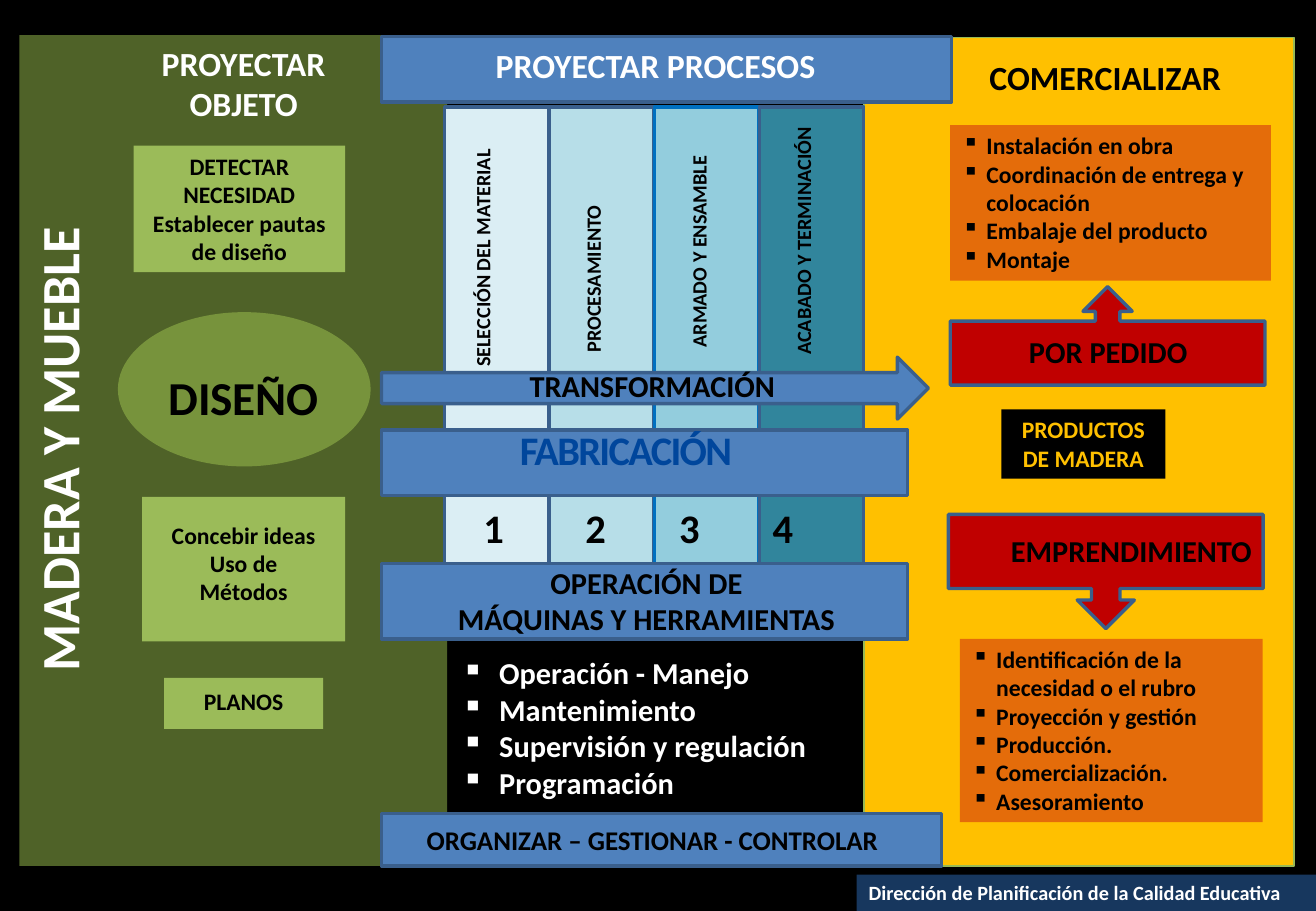
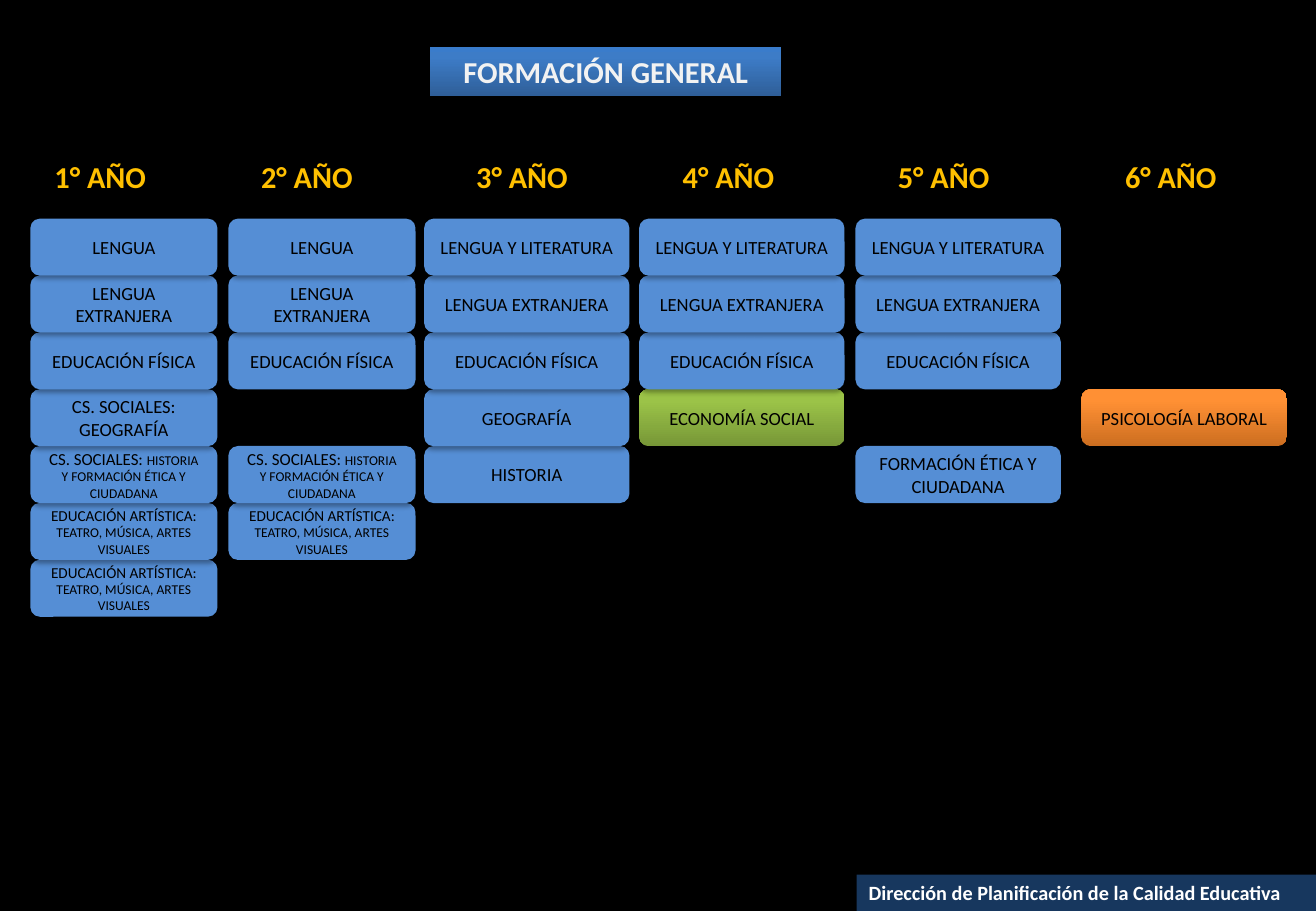
from dataclasses import dataclass, replace
from typing import NamedTuple, Optional

from lxml.etree import SubElement
from pptx import Presentation
from pptx.dml.color import RGBColor
from pptx.enum.shapes import MSO_SHAPE
from pptx.enum.text import MSO_ANCHOR, PP_ALIGN
from pptx.oxml import parse_xml
from pptx.oxml.ns import nsdecls, qn
from pptx.util import Inches, Pt

FONT = "Calibri"
COLORS = {
    "black": "000000", "white": "FFFFFF", "pale": "F2F2F2", "gold": "FFC000",
    "forest": "4F6228", "olive": "77933C", "leaf": "9BBB59", "leaf line": "98B955",
    "ice": "DBEEF4", "sky": "B7DEE8", "aqua": "93CDDD", "teal": "31859C",
    "blue": "4F81BD", "edge": "3A5F8C", "bright edge": "0070C0", "ink": "00469C",
    "red": "C00000", "orange": "E46C0A", "navy": "17375E", "subject": "558ED5",
}
# Bottom to top: colours at 0, 80 and 100 percent
GRADIENTS = {
    "green fade": ("779737", "9BC348", "9DC746"),
    "orange fade": ("CC6E20", "FF9034", "FF9136"),
    "blue fade": ("2F5F99", "3D7CC7", "3A7CCB"),
}
LEFT, CENTER, RIGHT = PP_ALIGN.LEFT, PP_ALIGN.CENTER, PP_ALIGN.RIGHT
TOP, MIDDLE = MSO_ANCHOR.TOP, MSO_ANCHOR.MIDDLE


class Span(NamedTuple):
    text: str
    size: float


@dataclass(frozen=True)
class Box:
    """A shape or, without a geometry, a text box. Lengths are inches."""
    left: float
    top: float
    width: float
    height: float
    paragraphs: tuple = ()  # each one a string or a tuple of Span
    geometry: Optional[MSO_SHAPE] = None
    fill: str = ""
    line: str = ""
    line_width: float = 2
    rotation: float = 0
    shadow: bool = False
    size: float = 14
    color: str = "black"
    bold: bool = True
    align: PP_ALIGN = LEFT
    anchor: MSO_ANCHOR = TOP
    vertical: bool = False
    hang: float = 0  # bullet indent
    tabs: tuple = ()
    spacing: int = 0  # hundredths of a point


class Stage(NamedTuple):
    fill: str
    line: str
    label: str
    label_left: float
    label_top: float
    label_height: float


class Year(NamedTuple):
    heading_left: float
    left: float
    width: float
    subjects: tuple  # one per row, None for an empty row


def rgb(name: str) -> RGBColor:
    return RGBColor.from_string(COLORS[name])


def paint(shape, box: Box) -> None:
    properties = shape._element.spPr
    if box.fill in GRADIENTS:
        stops = "".join(
            f'<a:gs pos="{position}"><a:srgbClr val="{color}"/></a:gs>'
            for position, color in zip((0, 80000, 100000), GRADIENTS[box.fill]))
        properties.find(qn("a:prstGeom")).addnext(parse_xml(
            f'<a:gradFill {nsdecls("a")} rotWithShape="1"><a:gsLst>{stops}</a:gsLst>'
            '<a:lin ang="16200000" scaled="0"/></a:gradFill>'))
    else:
        shape.fill.solid()
        shape.fill.fore_color.rgb = rgb(box.fill)
    if box.line:
        shape.line.color.rgb = rgb(box.line)
        shape.line.width = Pt(box.line_width)
    else:
        shape.line.fill.background()
    shape.shadow.inherit = False
    if box.shadow:
        properties.find(qn("a:effectLst")).append(parse_xml(
            f'<a:outerShdw {nsdecls("a")} blurRad="39370" dist="22860" dir="5400000" '
            'rotWithShape="0"><a:srgbClr val="000000"><a:alpha val="35000"/>'
            '</a:srgbClr></a:outerShdw>'))


def write(frame, box: Box) -> None:
    frame.word_wrap = True
    frame.vertical_anchor = box.anchor
    if box.vertical:
        frame._txBody.bodyPr.set("vert", "vert270")
    for index, content in enumerate(box.paragraphs):
        para = frame.add_paragraph() if index else frame.paragraphs[0]
        para.alignment = box.align
        properties = para._p.get_or_add_pPr()
        if box.hang:
            properties.set("marL", str(Inches(box.hang)))
            properties.set("indent", str(-Inches(box.hang)))
            SubElement(properties, qn("a:buChar")).set("char", "▪")
        if box.tabs:
            stops = SubElement(properties, qn("a:tabLst"))
            for position in box.tabs:
                stop = SubElement(stops, qn("a:tab"))
                stop.set("pos", str(Inches(position)))
                stop.set("algn", "l")
        para.font.name = FONT
        para.font.size = Pt(box.size)
        para.font.bold = box.bold
        para.font.color.rgb = rgb(box.color)
        if isinstance(content, str):
            run = para.add_run()
            run.text = content
            if box.spacing:
                run._r.get_or_add_rPr().set("spc", str(box.spacing))
            continue
        for span in content:
            run = para.add_run()
            run.text = span.text
            run.font.size = Pt(span.size)


def draw(page, *boxes: Box) -> None:
    for box in boxes:
        frame = [Inches(n) for n in (box.left, box.top, box.width, box.height)]
        if box.geometry is None:
            shape = page.shapes.add_textbox(*frame)
        else:
            shape = page.shapes.add_shape(box.geometry, *frame)
            shape.rotation = box.rotation
            paint(shape, box)
        if box.paragraphs:
            write(shape.text_frame, box)


def panel(left: float, top: float, width: float, height: float, fill: str,
          *paragraphs, **options) -> Box:
    options = {"geometry": MSO_SHAPE.RECTANGLE, **options}
    return Box(left, top, width, height, paragraphs, fill=fill, **options)


def bar(top: float, width: float, height: float, **options) -> Box:
    return panel(3.14, top, width, height, "blue", line="edge", **options)


def label(left: float, top: float, width: float, height: float,
          *paragraphs, **options) -> Box:
    options = {"align": CENTER, "anchor": MIDDLE, **options}
    return Box(left, top, width, height, paragraphs, **options)


def add_page(deck):
    page = deck.slides.add_slide(deck.slide_layouts[6])
    page.background.fill.solid()
    page.background.fill.fore_color.rgb = rgb("black")
    return page


def add_footer(page) -> None:
    draw(page, panel(7.05, 7.2, 3.78, 0.3, "navy",
                     "Dirección de Planificación de la Calidad Educativa",
                     size=12, color="white"))


STAGES = (
    Stage("ice", "edge", "SELECCIÓN DEL MATERIAL", 3.82, 0.99, 2.13),
    Stage("sky", "edge", "PROCESAMIENTO", 4.73, 1.55, 1.45),
    Stage("aqua", "bright edge", "ARMADO Y ENSAMBLE", 5.6, 1.14, 1.82),
    Stage("teal", "edge", "ACABADO Y TERMINACIÓN", 6.46, 0.89, 2.13),
)


def build_process_page(deck) -> None:
    page = add_page(deck)
    # Side panels
    draw(page,
         panel(0.16, 0.29, 3.52, 6.84, "forest"),
         panel(7.11, 0.31, 3.54, 6.82, "gold", line="leaf line", line_width=0.75,
               shadow=True))
    # Stage columns
    for index, stage in enumerate(STAGES):
        draw(page, panel(3.66 + 0.863 * index, 0.88, 0.86, 3.76, stage.fill,
                         line=stage.line))
    # Central bars and their captions
    draw(page,
         bar(3.54, 4.33, 0.54),
         label(4.18, 3.45, 2.56, 0.63, "FABRICACIÓN", size=24, color="ink",
               align=LEFT, anchor=TOP, spacing=-100),
         bar(2.94, 4.5, 0.51, geometry=MSO_SHAPE.RIGHT_ARROW),
         label(4.26, 2.97, 2.43, 0.4, "TRANSFORMACIÓN", size=18, align=LEFT, anchor=TOP))
    for stage in STAGES:
        draw(page, label(stage.label_left, stage.label_top, 0.4, stage.label_height,
                         stage.label, size=12, align=LEFT, anchor=TOP, vertical=True))
    draw(page,
         label(3.66, 4.09, 3.46, 0.5, "\t1\t2\t3\t4", size=24, align=LEFT, anchor=TOP,
               tabs=(0.22, 1.06, 1.83, 2.6)),
         bar(0.3, 4.69, 0.54),
         label(2.94, 0.22, 4.91, 0.63, "PROYECTAR PROCESOS", size=20, color="white"),
         bar(4.64, 4.33, 0.62),
         label(2.89, 4.63, 4.86, 0.63, "OPERACIÓN DE", "MÁQUINAS Y HERRAMIENTAS", size=18),
         label(3.7, 5.34, 3.17, 1.31, "Operación - Manejo", "Mantenimiento",
               "Supervisión y regulación", "Programación",
               size=18, color="white", align=LEFT, anchor=TOP, hang=0.31),
         bar(6.7, 4.61, 0.43),
         label(2.94, 6.6, 4.86, 0.63, "ORGANIZAR – GESTIONAR - CONTROLAR", size=16))
    # Design side
    draw(page,
         label(0.31, 0.37, 3.39, 0.63, "PROYECTAR", "OBJETO", size=20, color="white"),
         panel(1.1, 1.2, 1.74, 1.04, "leaf", "DETECTAR", "NECESIDAD",
               "Establecer pautas", "de diseño", align=CENTER),
         panel(0.97, 2.57, 2.08, 1.27, "olive", geometry=MSO_SHAPE.OVAL),
         label(1.09, 2.98, 1.83, 0.57, "DISEÑO", size=28, anchor=TOP),
         panel(1.17, 4.09, 1.67, 1.19, "leaf"),
         label(1.3, 4.09, 1.41, 1.09, "Concebir ideas", "Uso de Métodos"),
         panel(1.35, 5.58, 1.31, 0.42, "leaf"),
         label(1.3, 5.55, 1.41, 0.44, "PLANOS"),
         label(0.16, 0.29, 0.74, 6.82, "MADERA Y MUEBLE", size=32, color="white",
               anchor=TOP, vertical=True))
    # Sales side
    callout = panel(8.71, 1.47, 0.81, 2.59, "red", line="edge", rotation=270,
                    geometry=MSO_SHAPE.RIGHT_ARROW_CALLOUT)
    draw(page,
         label(7.82, 0.4, 2.55, 0.47, "COMERCIALIZAR", size=20),
         panel(8.24, 3.37, 1.35, 0.57, "black", "PRODUCTOS", "DE MADERA",
               color="gold", align=CENTER),
         callout,
         label(7.82, 2.75, 2.6, 0.29, "POR PEDIDO", size=18),
         replace(callout, left=8.63, top=3.41, width=0.94, rotation=90),
         label(7.8, 4.22, 2.6, 0.63, "EMPRENDIMIENTO", size=18, align=RIGHT),
         panel(7.82, 1.03, 2.64, 1.28, "orange", "Instalación en obra",
               "Coordinación de entrega y colocación", "Embalaje del producto",
               "Montaje", hang=0.2),
         panel(7.9, 5.26, 2.49, 1.51, "orange",
               "Identificación de la necesidad o el rubro", "Proyección y gestión",
               "Producción.", "Comercialización.", "Asesoramiento", hang=0.2))
    add_footer(page)


SOCIAL = (Span("CS. SOCIALES: ", 10), Span("HISTORIA Y FORMACIÓN ÉTICA Y CIUDADANA", 8))
ARTS = (Span("EDUCACIÓN ARTÍSTICA: ", 9), Span("TEATRO, MÚSICA, ARTES VISUALES", 8))
LOWER = ("LENGUA", "LENGUA EXTRANJERA", "EDUCACIÓN FÍSICA")
UPPER = ("LENGUA Y LITERATURA",) + LOWER[1:]
YEARS = (
    Year(0.35, 0.25, 1.54, LOWER + ("CS. SOCIALES: GEOGRAFÍA", SOCIAL, ARTS, ARTS)),
    Year(2.05, 1.88, 1.54, LOWER + (None, SOCIAL, ARTS)),
    Year(3.82, 3.49, 1.69, UPPER + ("GEOGRAFÍA", "HISTORIA")),
    Year(5.52, 5.26, 1.69, UPPER + ("ECONOMÍA SOCIAL",)),
    Year(7.29, 7.04, 1.69, UPPER + (None, "FORMACIÓN ÉTICA Y CIUDADANA")),
    Year(9.16, 8.9, 1.69, (None, None, None, "PSICOLOGÍA LABORAL")),
)
SPECIAL_FILLS = {"ECONOMÍA SOCIAL": "green fade", "PSICOLOGÍA LABORAL": "orange fade"}


def build_subjects_page(deck) -> None:
    page = add_page(deck)
    draw(page, panel(3.54, 0.39, 2.89, 0.4, "blue fade", "FORMACIÓN GENERAL", size=18,
                     color="pale", align=CENTER, shadow=True))
    # Year columns, lowest row first so each shadow falls on the row below
    for number, year in enumerate(YEARS, start=1):
        draw(page, label(year.heading_left, 1.25, 1.18, 0.4, f"{number}° AÑO",
                         size=18, color="gold", align=LEFT, anchor=TOP))
        for row, subject in reversed(list(enumerate(year.subjects))):
            if subject:
                draw(page, panel(year.left, 1.8 + 0.468 * row, year.width, 0.47,
                                 SPECIAL_FILLS.get(subject, "subject"), subject,
                                 geometry=MSO_SHAPE.ROUNDED_RECTANGLE, shadow=True,
                                 size=11, bold=False, align=CENTER, anchor=MIDDLE))
    add_footer(page)


def main() -> None:
    deck = Presentation()
    deck.slide_width, deck.slide_height = Inches(10.83), Inches(7.5)
    build_process_page(deck)
    build_subjects_page(deck)
    deck.save("out.pptx")


if __name__ == "__main__":
    main()
